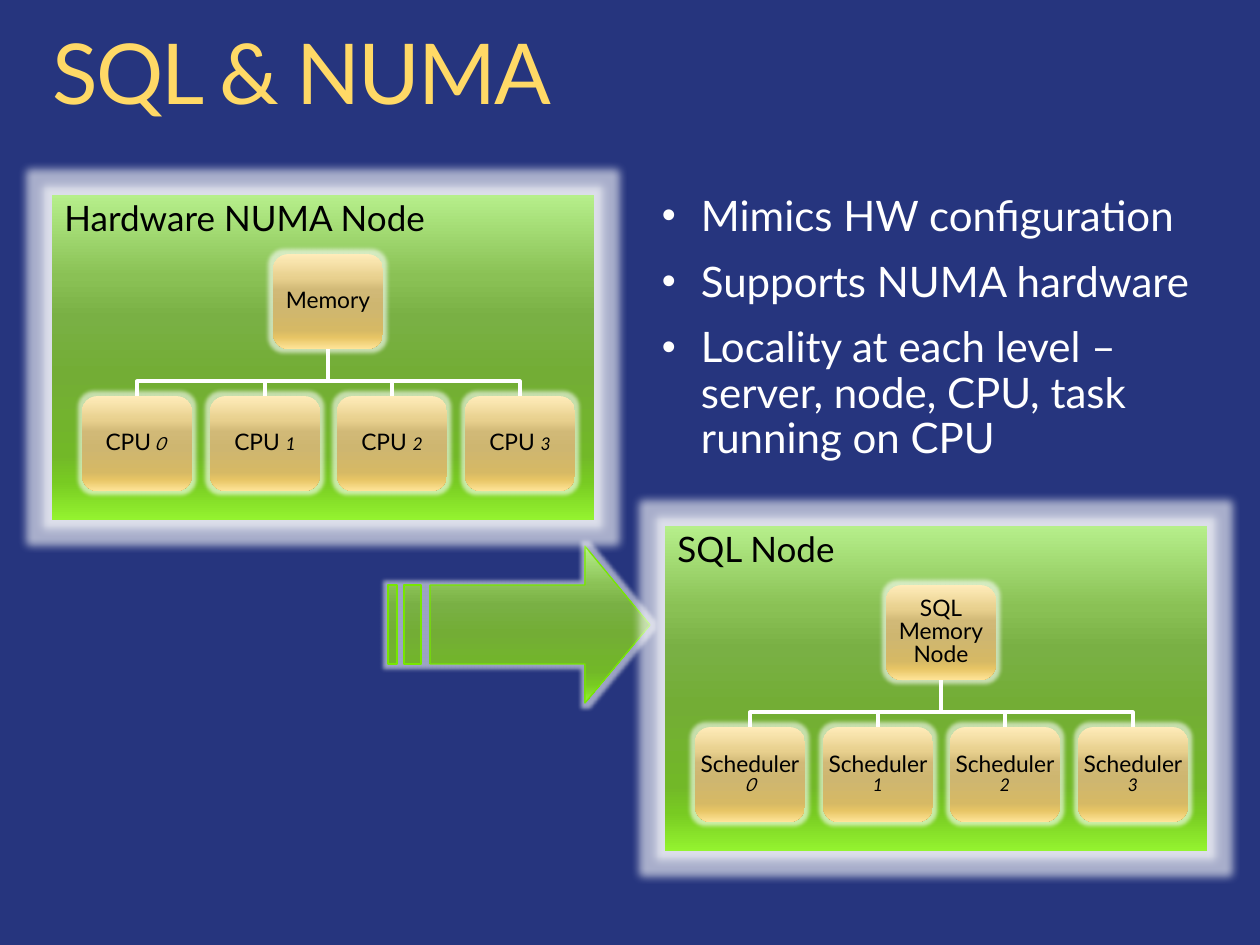
from lxml import etree
from pptx import Presentation
from pptx import util as u
from pptx.dml.color import RGBColor
from pptx.enum import shapes, text
from pptx.oxml.ns import qn

SCALE = 914400 / 126
FONT = "Lato"
COLORS = {"bg": "26357E", "title": "FFD966", "white": "FFFFFF",
          "black": "000000", "edge": "77E700"}
STOPS = (0, 25, 38, 55, 80, 88, 100)
GRADIENTS = {
    "green": "B6EF8B 8AC155 79B044 73AD35 72B828 78CA22 94F32F".split(),
    "gold": "FFECBA E8D08E D1B977 CEB670 D6B965 E7C565 FFE498".split(),
}
PANEL_W, PANEL_H = 542, 325
NODE_W, NODE_H = 110, 95
PARENT_X, PARENT_Y = 221, 59
CHILD_X, CHILD_Y, CHILD_SPAN = 30, 201, 383


def px(n):
    return u.Emu(round(n * SCALE))


def rgb(name):
    return RGBColor.from_string(COLORS[name])


def sub(parent, tag, **attrs):
    return etree.SubElement(parent, qn(tag), attrs)


def style_font(font, size, color, italic=None):
    font.name, font.size, font.italic = FONT, u.Pt(size), italic
    font.color.rgb = rgb(color)


def set_frame(tf, inset=None, anchor=text.MSO_ANCHOR.TOP):
    tf.word_wrap = True
    tf.vertical_anchor = anchor
    if inset is not None:
        tf.margin_left = tf.margin_right = tf.margin_top = tf.margin_bottom = inset


def paint(sp, gradient, glow, alpha):
    sp.fill.gradient()
    sp.fill.gradient_angle = 270
    stops = sp._element.spPr.find(".//" + qn("a:gsLst"))
    for old in list(stops):
        stops.remove(old)
    for pos, color in zip(STOPS, GRADIENTS[gradient]):
        gs = sub(stops, "a:gs", pos=str(pos * 1000))
        sub(gs, "a:srgbClr", val=color)
    sp.line.fill.background()
    sp.shadow.inherit = False
    effects = sp._element.spPr.find(qn("a:effectLst"))
    halo = sub(effects, "a:glow", rad=str(px(glow)))
    color = sub(halo, "a:srgbClr", val=COLORS["white"])
    sub(color, "a:alpha", val=str(alpha * 1000))


def add_text(s, x, y, w, h):
    tf = s.shapes.add_textbox(px(x), px(y), px(w), px(h)).text_frame
    set_frame(tf, 0)
    return tf


def add_title(s, words):
    p = add_text(s, 53, 32, 1154, 92).paragraphs[0]
    p.line_spacing = 0.9
    r = p.add_run()
    r.text = words
    style_font(r.font, 48, "title")
    r._r.get_or_add_rPr().set("spc", "-120")


def add_bullets(s, items):
    tf = add_text(s, 662, 195, 546, 271)
    for i, item in enumerate(items):
        p = tf.add_paragraph() if i else tf.paragraphs[0]
        p.text = item
        p.line_spacing = 0.9
        if i:
            p.space_before = u.Pt(11.7)
        pPr = p._p.get_or_add_pPr()
        pPr.set("marL", str(px(39)))
        pPr.set("indent", str(-px(39)))
        sub(sub(pPr, "a:buClr"), "a:srgbClr", val=COLORS["white"])
        sub(pPr, "a:buSzPct", val="95000")
        sub(pPr, "a:buFont", typeface="Arial")
        sub(pPr, "a:buChar", char="•")
        style_font(p.font, 24, "white")


def add_arrow(s):
    head = [(585, 546), (585, 585), (430, 585), (430, 664), (585, 664),
            (585, 703), (650, 625)]
    bars = [[(l, 585), (l, 664), (r, 664), (r, 585)]
            for l, r in ((404, 421), (388, 397))]
    fb = s.shapes.build_freeform(*head[0], scale=SCALE)
    fb.add_line_segments(head[1:], close=True)
    for bar in bars:
        fb.move_to(*bar[0])
        fb.add_line_segments(bar[1:], close=True)
    sp = fb.convert_to_shape()
    paint(sp, "green", 8, 55)
    sp.line.color.rgb = rgb("edge")
    sp.line.width = u.Pt(0.75)


def add_link(s, child_x, child_y, parent_x, parent_y):
    dx, dy = abs(parent_x - child_x), child_y - parent_y
    cx, cy = (child_x + parent_x) / 2, (child_y + parent_y) / 2
    side = 1 if child_x > parent_x else -1
    c = s.shapes.add_connector(
        shapes.MSO_CONNECTOR.ELBOW, px(cx + side * dy / 2), px(cy - dx / 2),
        px(cx - side * dy / 2), px(cy + dx / 2))
    spPr = c._element.spPr
    spPr.find(qn("a:xfrm")).set("rot", str((90 if side > 0 else 270) * 60000))
    sub(spPr.find(".//" + qn("a:avLst")), "a:gd", name="adj1", fmla="val 31200")
    c.line.color.rgb = rgb("white")
    c.line.width = u.Pt(2.25)
    sub(spPr, "a:effectLst")


def add_node(s, x, y, lines):
    sp = s.shapes.add_shape(shapes.MSO_SHAPE.ROUNDED_RECTANGLE,
                            px(x), px(y), px(NODE_W), px(NODE_H))
    paint(sp, "gold", 8, 60)
    tf = sp.text_frame
    set_frame(tf, 0, text.MSO_ANCHOR.MIDDLE)
    for i, parts in enumerate(lines):
        p = tf.add_paragraph() if i else tf.paragraphs[0]
        p.alignment = text.PP_ALIGN.CENTER
        p.line_spacing = 0.85
        for words, is_index in parts:
            r = p.add_run()
            r.text = words
            style_font(r.font, 10 if is_index else 13, "black", is_index)


def add_panel(s, x, y, heading, parent, children):
    sp = s.shapes.add_shape(shapes.MSO_SHAPE.RECTANGLE,
                            px(x), px(y), px(PANEL_W), px(PANEL_H))
    paint(sp, "green", 17, 60)
    set_frame(sp.text_frame)
    p = sp.text_frame.paragraphs[0]
    p.text = heading
    p.alignment = text.PP_ALIGN.LEFT
    p.line_spacing = 0.9
    style_font(p.font, 20, "black")

    gap = CHILD_SPAN / (len(children) - 1)
    lefts = [x + CHILD_X + round(i * gap) for i in range(len(children))]
    for left in reversed(lefts):
        add_link(s, left + NODE_W / 2, y + CHILD_Y,
                 x + PARENT_X + NODE_W / 2, y + PARENT_Y + NODE_H)
    add_node(s, x + PARENT_X, y + PARENT_Y, [[(w, False)] for w in parent])
    for left, lines in zip(lefts, children):
        add_node(s, left, y + CHILD_Y, lines)


def main():
    prs = Presentation()
    prs.slide_width, prs.slide_height = px(1260), px(945)
    s = prs.slides.add_slide(prs.slide_layouts[6])
    s.background.fill.solid()
    s.background.fill.fore_color.rgb = rgb("bg")

    digits = "０123"
    schedulers = [[[("Scheduler", False)], [(d, True)]] for d in digits]
    cpus = [[[("CPU" if d == "０" else "CPU ", False), (d, True)]] for d in digits]

    add_title(s, "SQL & NUMA")
    add_arrow(s)
    add_panel(s, 665, 526, "SQL Node", ["SQL", "Memory", "Node"], schedulers)
    add_bullets(s, ["Mimics HW configuration", "Supports NUMA hardware",
                    "Locality at each level – server, node, CPU, task running on CPU"])
    add_panel(s, 52, 195, "Hardware NUMA Node", ["Memory"], cpus)
    prs.save("out.pptx")


if __name__ == "__main__":
    main()
